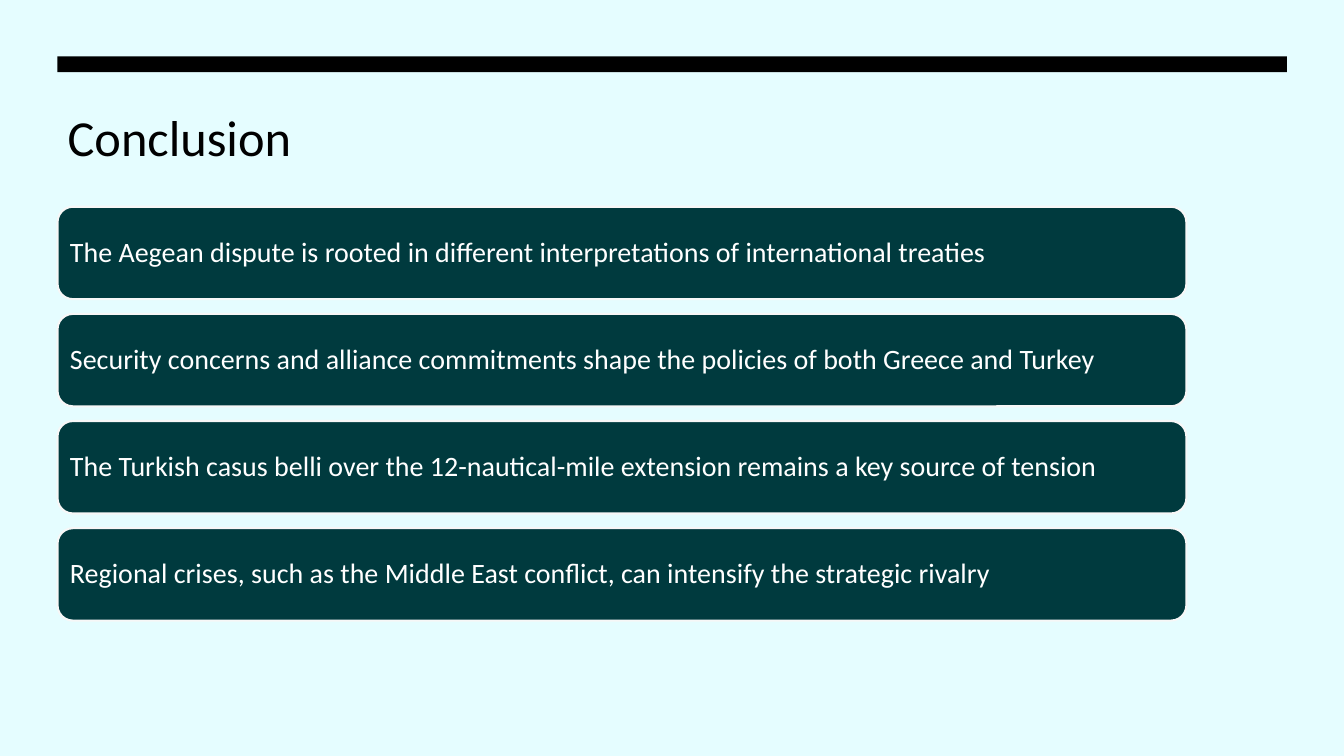
from pptx import Presentation
from pptx.dml.color import RGBColor
from pptx.enum.shapes import MSO_SHAPE as Shape
from pptx.enum.text import MSO_ANCHOR as Anchor, PP_ALIGN as Align
from pptx.util import Cm, Pt

TITLE = "Conclusion"
CONCLUSIONS = [
    "The Aegean dispute is rooted in different interpretations of international treaties",
    "Security concerns and alliance commitments shape the policies of both Greece and Turkey",
    "The Turkish casus belli over the 12-nautical-mile extension remains a key source of tension",
    "Regional crises, such as the Middle East conflict, can intensify the strategic rivalry",
]

FONT = "Calibri"
PALE_CYAN = RGBColor(0xE5, 0xFD, 0xFF)
DARK_TEAL = RGBColor(0x00, 0x3A, 0x3E)
OFF_WHITE = RGBColor(0xF7, 0xF7, 0xF7)
WHITE = RGBColor(0xFF, 0xFF, 0xFF)
BLACK = RGBColor(0x00, 0x00, 0x00)

LEFT = 1.45
CARD_TOP = 5.21
CARD_WIDTH = 28.45
CARD_HEIGHT = 2.33
CARD_PITCH = 2.7
CARD_INSET = Cm(0.2)


def add_box(page, kind, left, top, width, height, fill):
    box = page.shapes.add_shape(kind, Cm(left), Cm(top), Cm(width), Cm(height))
    box.shadow.inherit = False
    box.fill.solid()
    box.fill.fore_color.rgb = fill
    return box


def write(frame, text, size, color, anchor):
    frame.word_wrap = True
    frame.vertical_anchor = anchor
    para = frame.paragraphs[0]
    para.text = text
    para.alignment = Align.LEFT
    para.line_spacing = 0.9
    para.font.name = FONT
    para.font.size = Pt(size)
    para.font.color.rgb = color


def add_card(page, index, text):
    top = CARD_TOP + index * CARD_PITCH
    card = add_box(page, Shape.ROUNDED_RECTANGLE, LEFT, top, CARD_WIDTH, CARD_HEIGHT, DARK_TEAL)
    card.line.color.rgb = OFF_WHITE
    card.line.width = Pt(1.5)
    frame = card.text_frame
    frame.margin_left = frame.margin_right = CARD_INSET
    frame.margin_top = frame.margin_bottom = CARD_INSET
    write(frame, text, 20, WHITE, Anchor.MIDDLE)


def main():
    deck = Presentation()
    deck.slide_width, deck.slide_height = Cm(33.87), Cm(19.05)
    page = deck.slides.add_slide(deck.slide_layouts[5])
    page.background.fill.solid()
    page.background.fill.fore_color.rgb = PALE_CYAN

    bar = add_box(page, Shape.RECTANGLE, LEFT, 1.42, 30.98, 0.4, BLACK)
    bar.line.fill.background()

    title = page.shapes.title
    title.left, title.top = Cm(LEFT), Cm(2.72)
    title.width, title.height = Cm(24.26), Cm(4.06)
    write(title.text_frame, TITLE, 36, BLACK, Anchor.TOP)

    for index, text in enumerate(CONCLUSIONS):
        add_card(page, index, text)

    deck.save("out.pptx")


if __name__ == "__main__":
    main()
